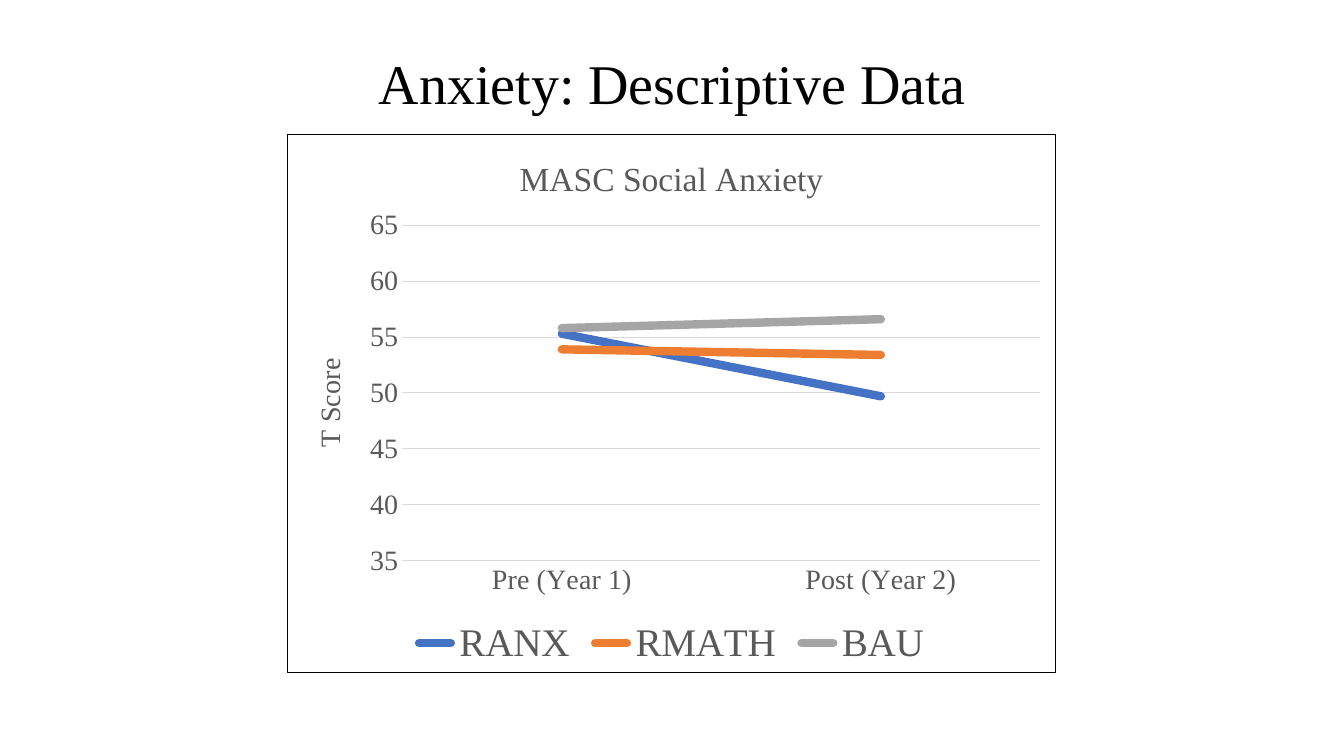
from typing import NamedTuple

from lxml import etree
from pptx import Presentation
from pptx.chart.chart import Chart
from pptx.chart.data import CategoryChartData
from pptx.dml.color import RGBColor
from pptx.enum.chart import XL_CHART_TYPE, XL_LEGEND_POSITION, XL_TICK_MARK
from pptx.enum.text import MSO_ANCHOR, PP_ALIGN
from pptx.oxml import parse_xml
from pptx.oxml.ns import nsdecls, qn
from pptx.slide import Slide
from pptx.util import Emu, Pt

LINE_CHART = XL_CHART_TYPE.LINE
LEGEND_BOTTOM = XL_LEGEND_POSITION.BOTTOM
NO_TICK = XL_TICK_MARK.NONE
MIDDLE = MSO_ANCHOR.MIDDLE
CENTER = PP_ALIGN.CENTER

SLIDE_WIDTH, SLIDE_HEIGHT = 1344, 756
EMU_PER_PX = 12192000 / SLIDE_WIDTH
FONT = "Times New Roman"
BLACK, GRAY, GRID = "000000", "595959", "D9D9D9"


class Box(NamedTuple):
    left: int
    top: int
    width: int
    height: int


class ScoreLine(NamedTuple):
    name: str
    scores: tuple[float, ...]
    color: str


TITLE_BOX = Box(93, 13, 1159, 146)
CHART_BOX = Box(287, 134, 769, 539)
PLOT_BOX = Box(402, 225, 639, 336)
CATEGORIES = ("Pre (Year 1)", "Post (Year 2)")
SCORE_LINES = (
    ScoreLine("RANX", (55.3, 49.7), "4472C4"),
    ScoreLine("RMATH", (53.9, 53.4), "ED7D31"),
    ScoreLine("BAU", (55.8, 56.6), "A5A5A5"),
)


def px(length: int) -> Emu:
    return Emu(round(length * EMU_PER_PX))


def color(value: str) -> RGBColor:
    return RGBColor.from_string(value)


def style_font(font, size: int, value: str) -> None:
    font.name = FONT
    font.size = Pt(size)
    font.bold = False
    font.color.rgb = color(value)


def style_line(line, width: float, value: str) -> None:
    line.width = Pt(width)
    line.color.rgb = color(value)


def add_text(text_frame, text: str, size: int, value: str):
    paragraph = text_frame.paragraphs[0]
    run = paragraph.add_run()
    run.text = text
    style_font(run.font, size, value)
    return paragraph


def add_title(slide: Slide) -> None:
    shape = slide.shapes.add_textbox(*map(px, TITLE_BOX))
    text_frame = shape.text_frame
    text_frame.word_wrap = True
    text_frame.vertical_anchor = MIDDLE
    paragraph = add_text(text_frame, "Anxiety: Descriptive Data", 40, BLACK)
    paragraph.alignment = CENTER
    paragraph.line_spacing = 0.9


def add_border(chart: Chart) -> None:
    border = parse_xml(
        f'<c:spPr {nsdecls("c", "a")}><a:noFill/><a:ln w="{Pt(0.75)}"><a:solidFill>'
        f'<a:srgbClr val="{BLACK}"/></a:solidFill></a:ln></c:spPr>'
    )
    chart.element.find(qn("c:chart")).addnext(border)


def place_plot(chart: Chart) -> None:
    plot_area = chart.element.find(".//" + qn("c:plotArea"))
    for layout in plot_area.findall(qn("c:layout")):
        plot_area.remove(layout)
    layout = etree.Element(qn("c:layout"))
    manual = etree.SubElement(layout, qn("c:manualLayout"))
    settings = {
        "layoutTarget": "inner",
        "xMode": "edge",
        "yMode": "edge",
        "x": (PLOT_BOX.left - CHART_BOX.left) / CHART_BOX.width,
        "y": (PLOT_BOX.top - CHART_BOX.top) / CHART_BOX.height,
        "w": PLOT_BOX.width / CHART_BOX.width,
        "h": PLOT_BOX.height / CHART_BOX.height,
    }
    for tag, value in settings.items():
        etree.SubElement(manual, qn(f"c:{tag}")).set("val", str(value))
    plot_area.insert(0, layout)


def style_axes(chart: Chart) -> None:
    category_axis, value_axis = chart.category_axis, chart.value_axis
    for axis in (category_axis, value_axis):
        axis.major_tick_mark = axis.minor_tick_mark = NO_TICK
        style_font(axis.tick_labels.font, 20, GRAY)
    style_line(category_axis.format.line, 0.75, GRID)
    value_axis.format.line.fill.background()
    value_axis.minimum_scale, value_axis.maximum_scale = 35, 65
    value_axis.major_unit = 5
    style_line(value_axis.major_gridlines.format.line, 0.75, GRID)
    add_text(value_axis.axis_title.text_frame, "T Score", 20, GRAY)


def add_score_chart(slide: Slide) -> None:
    data = CategoryChartData()
    data.categories = CATEGORIES
    for score_line in SCORE_LINES:
        data.add_series(score_line.name, score_line.scores)
    chart = slide.shapes.add_chart(LINE_CHART, *map(px, CHART_BOX), data).chart
    style_font(chart.font, 20, BLACK)
    add_border(chart)

    # Heading and legend
    chart.has_title = True
    add_text(chart.chart_title.text_frame, "MASC Social Anxiety", 24, GRAY)
    chart.chart_title.include_in_layout = False
    chart.has_legend = True
    chart.legend.position = LEGEND_BOTTOM
    chart.legend.include_in_layout = False
    style_font(chart.legend.font, 28, GRAY)

    # Axes and plot area
    style_axes(chart)
    place_plot(chart)

    # Thick lines with round ends
    plot = chart.plots[0]
    plot.vary_by_categories = False
    for series, score_line in zip(plot.series, SCORE_LINES):
        series.smooth = False
        style_line(series.format.line, 6, score_line.color)
    for series_element in chart.element.iter(qn("c:ser")):
        series_element.find(f'{qn("c:spPr")}/{qn("a:ln")}').set("cap", "rnd")


def main() -> None:
    presentation = Presentation()
    presentation.slide_width = px(SLIDE_WIDTH)
    presentation.slide_height = px(SLIDE_HEIGHT)
    slide = presentation.slides.add_slide(presentation.slide_layouts[6])
    add_title(slide)
    add_score_chart(slide)
    presentation.save("out.pptx")


if __name__ == "__main__":
    main()
